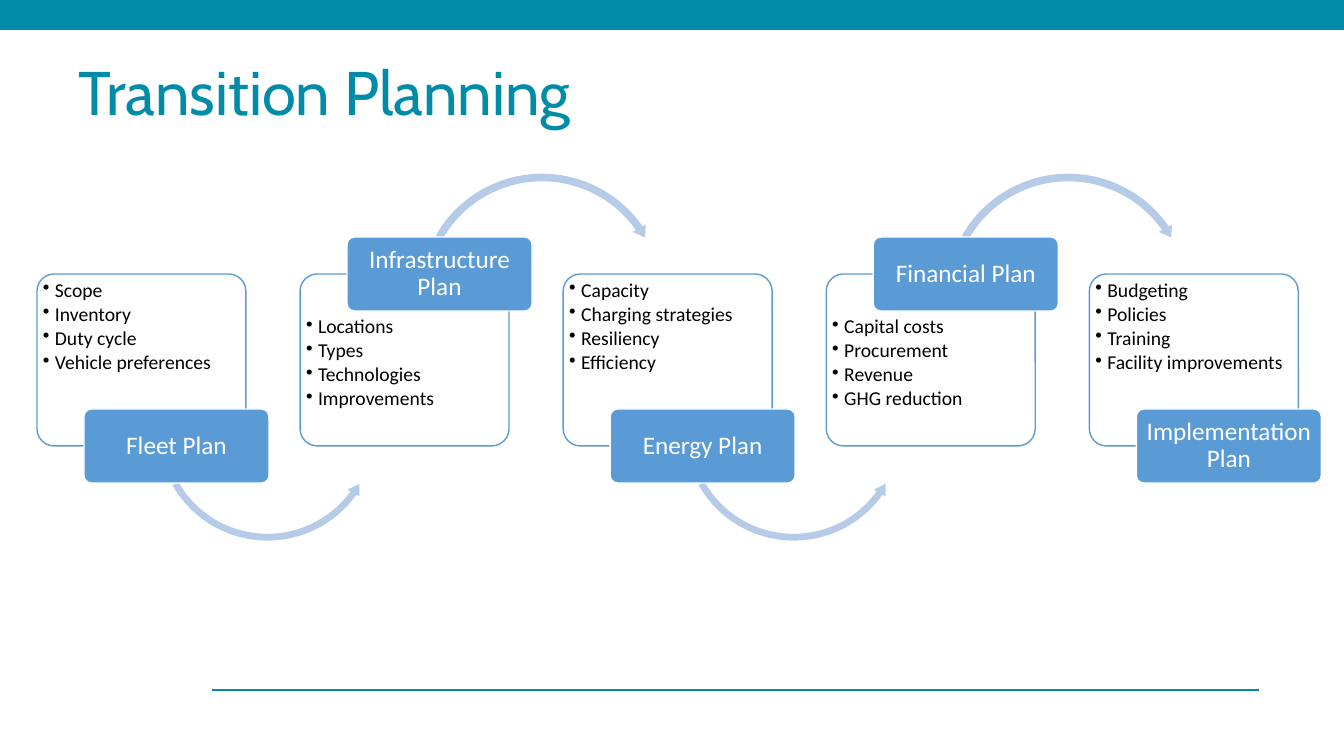
"""Builds the Transition Planning slide: five linked plan cards."""
from lxml import etree
from pptx import Presentation
from pptx import util as u
from pptx.dml.color import RGBColor
from pptx.enum import shapes, text
from pptx.oxml import ns

PX = 914400 / 100.8
HUE = {"teal": "008CA7", "blue": "5B9BD5", "pale": "B5CBE7",
       "white": "FFFFFF", "black": "000000"}
KIND = shapes.MSO_SHAPE
PITCH = 263.1
PLANS = [
    ("Fleet Plan", ["Scope", "Inventory", "Duty cycle", "Vehicle preferences"]),
    ("Infrastructure Plan", ["Locations", "Types", "Technologies", "Improvements"]),
    ("Energy Plan", ["Capacity", "Charging strategies", "Resiliency", "Efficiency"]),
    ("Financial Plan", ["Capital costs", "Procurement", "Revenue", "GHG reduction"]),
    ("Implementation Plan", ["Budgeting", "Policies", "Training", "Facility improvements"]),
]
ARCS = [
    (KIND.LEFT_CIRCULAR_ARROW, 118, 319, 225, [0.03, 3.58, 21.34, 90.25, 0.03]),
    (KIND.CIRCULAR_ARROW, 116, 170, 252, [0.03, 3.18, 195.07, 125.76, 0.03]),
]


def draw(kind, x, y, w, h, fill, line=None, adj=()):
    item = slide.shapes.add_shape(kind, *[round(n * PX) for n in (x, y, w, h)])
    item.shadow.inherit = False
    item.fill.solid()
    item.fill.fore_color.rgb = RGBColor.from_string(HUE[fill])
    if line:
        item.line.color.rgb = RGBColor.from_string(HUE[line])
        item.line.width = u.Pt(1)
    else:
        item.line.fill.background()
    for i, val in enumerate(adj):
        item.adjustments[i] = val
    return item


def write(item, words, size, hue, face, pads, anchor, align, gap):
    frame = item.text_frame
    frame.word_wrap = True
    frame.vertical_anchor = anchor
    (frame.margin_left, frame.margin_top,
     frame.margin_right, frame.margin_bottom) = [round(n * PX) for n in pads]
    frame.text = "\n".join(words)
    for para in frame.paragraphs:
        para.alignment = align
        para.line_spacing = gap
        for run in para.runs:
            run.font.size = u.Pt(size)
            run.font.name = face
            run.font.color.rgb = RGBColor.from_string(HUE[hue])
    return frame


deck = Presentation()
deck.slide_width = round(1344 * PX)
deck.slide_height = round(756 * PX)
slide = deck.slides.add_slide(deck.slide_layouts[6])

draw(KIND.RECTANGLE, 0, 0, 1344, 30, "teal")
rule = slide.shapes.add_connector(
    shapes.MSO_CONNECTOR.STRAIGHT, *[round(n * PX) for n in (212, 690, 1259, 690)])
rule.line.color.rgb = RGBColor.from_string(HUE["teal"])
rule.line.width = u.Pt(1.25)
etree.SubElement(rule.element.spPr, ns.qn("a:effectLst"))

title = slide.shapes.add_textbox(*[round(n * PX) for n in (69, 58, 1207, 64)])
write(title, ["Transition Planning"], 44, "teal", "Cabin", (10, 5, 10, 5),
      text.MSO_ANCHOR.TOP, text.PP_ALIGN.LEFT, u.Pt(46))

for i, (name, points) in enumerate(PLANS):
    x = 37 + i * PITCH
    high = i % 2
    card = draw(KIND.ROUNDED_RECTANGLE, x, 274, 209, 172, "white", "blue", [0.1])
    body = write(card, points, 14, "black", "Calibri", (1, 38 if high else 2, 3, 0),
                 text.MSO_ANCHOR.TOP, text.PP_ALIGN.LEFT, 0.9)
    for para in body.paragraphs:
        para.space_after = u.Pt(2)
        props = para._p.get_or_add_pPr()
        props.set("marL", str(round(12 * PX)))
        props.set("indent", str(round(-12 * PX)))
        etree.SubElement(props, ns.qn("a:buChar"), char="•")
    if i < len(PLANS) - 1:
        kind, dx, y, size, adj = ARCS[high]
        draw(kind, x + dx, y, size, size, "pale", adj=adj)
    label = draw(KIND.ROUNDED_RECTANGLE, x + 47, 237 if high else 409, 185, 74,
                 "blue", "white", [0.1])
    write(label, [name], 18, "white", "Calibri", (4, 3, 4, 3),
          text.MSO_ANCHOR.MIDDLE, text.PP_ALIGN.CENTER, 0.9)

deck.save("out.pptx")
